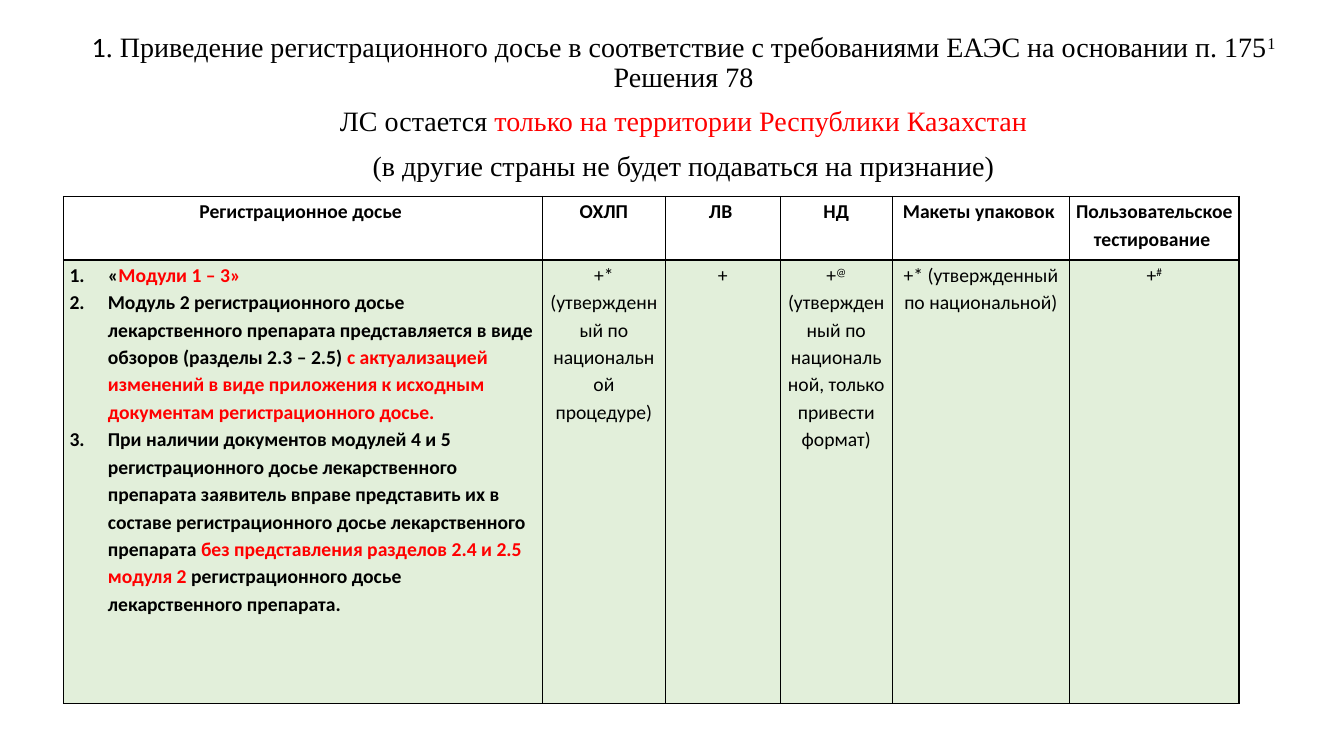
"""Build the slide on bringing a registration dossier into line with EAEU rules."""
import pptx
import pptx.dml.color
import pptx.enum.text
import pptx.oxml
import pptx.oxml.ns
import pptx.util
from pptx.util import Inches

COLORS = {"black": "000000", "red": "FF0000", "green": "E2EFDA"}
CENTER = pptx.enum.text.PP_ALIGN.CENTER


def write(para, pieces, size, face, bold=False):
    """Add runs, each piece being a text and its style: plain, red or super."""
    for text, style in pieces:
        span = para.add_run()
        span.text = text
        span.font.size = pptx.util.Pt(size)
        span.font.name = face
        span.font.bold = bold
        color = COLORS["red" if style == "red" else "black"]
        span.font.color.rgb = pptx.dml.color.RGBColor.from_string(color)
        if style == "super":
            span.font._element.set("baseline", "30000")


def set_bullet(para, indent, bullet):
    """Set a hanging indent in inches and a bullet element."""
    properties = para._p.get_or_add_pPr()
    properties.set("marL", str(Inches(indent)))
    properties.set("indent", str(-Inches(indent)))
    namespace = pptx.oxml.ns.nsdecls("a")
    properties.append(pptx.oxml.parse_xml(f"<a:{bullet} {namespace}/>"))


deck = pptx.Presentation()
deck.slide_width = Inches(13.33)
deck.slide_height = Inches(7.5)
page = deck.slides.add_slide(deck.slide_layouts[1])
title = page.shapes.title
title._element.getparent().remove(title._element)

heading = [
    [
        ("1", "plain"),
        (". Приведение регистрационного досье в соответствие с требованиями ЕАЭС на основании п. 175", "plain"),
        ("1", "super"),
        (" Решения 78", "plain"),
    ],
    [(" ЛС остается ", "plain"), ("только на территории Республики Казахстан ", "red")],
    [("(в другие страны не будет подаваться на признание)", "plain")],
]
body = page.placeholders[1]
body.left, body.top, body.width, body.height = map(Inches, (0.63, 0.28, 12.3, 6.48))
frame = body.text_frame
frame.auto_size = pptx.enum.text.MSO_AUTO_SIZE.NONE
frame.vertical_anchor = pptx.enum.text.MSO_ANCHOR.TOP
for number, pieces in enumerate(heading):
    para = frame.add_paragraph() if number else frame.paragraphs[0]
    para.alignment = CENTER
    para.line_spacing = 0.9
    para.space_before = pptx.util.Pt(10)
    set_bullet(para, 0, "buNone")
    write(para, pieces, 20, "Times New Roman")
frame.paragraphs[0].runs[0].font.name = "Calibri"

headers = [
    ["Регистрационное досье "],
    ["ОХЛП"],
    ["ЛВ "],
    ["НД"],
    ["Макеты упаковок "],
    ["Пользовательское ", "тестирование "],
]
dossier = [
    [("«", "plain"), ("Модули 1 – 3»", "red")],
    [
        ("Модуль 2 регистрационного досье лекарственного препарата представляется в виде обзоров (разделы 2.3 – 2.5) ", "plain"),
        ("с актуализацией изменений в виде приложения к исходным документам регистрационного досье.", "red"),
    ],
    [
        ("При наличии документов модулей 4 и 5 регистрационного досье лекарственного препарата заявитель вправе представить их в составе регистрационного досье лекарственного препарата ", "plain"),
        ("без представления разделов 2.4 и 2.5 модуля 2 ", "red"),
        ("регистрационного досье лекарственного препарата.", "plain"),
    ],
]
requirements = [
    dossier,
    [[("+* (утвержденный по национальной процедуре)", "plain")]],
    [[("+", "plain")]],
    [[("+", "plain"), ("@ ", "super"), ("(утвержденный по национальной, только привести формат)", "plain")]],
    [[("+* (утвержденный по национальной)", "plain")]],
    [[("+", "plain"), ("#", "super")]],
]
header_row = [[[(line, "plain")] for line in lines] for lines in headers]
rows = [header_row, requirements]
widths = [4.75, 1.22, 1.14, 1.11, 1.76, 1.68]
heights = [0.63, 4.4]

table = page.shapes.add_table(
    len(rows), len(widths), Inches(0.63), Inches(1.95), Inches(sum(widths)), Inches(sum(heights))
).table
table.first_row = False
table.horz_banding = False
for column, width in zip(table.columns, widths):
    column.width = Inches(width)
for row, height in zip(table.rows, heights):
    row.height = Inches(height)

for row_number, row in enumerate(rows):
    for column_number, lines in enumerate(row):
        cell = table.cell(row_number, column_number)
        cell.margin_left = cell.margin_right = Inches(0.06)
        cell.margin_top = cell.margin_bottom = 0
        for side in ("lnL", "lnR", "lnT", "lnB"):
            border = (
                f'<a:{side} {pptx.oxml.ns.nsdecls("a")} w="12700"><a:solidFill>'
                f'<a:srgbClr val="{COLORS["black"]}"/></a:solidFill></a:{side}>'
            )
            cell._tc.get_or_add_tcPr().append(pptx.oxml.parse_xml(border))
        if row_number:
            cell.fill.solid()
            cell.fill.fore_color.rgb = pptx.dml.color.RGBColor.from_string(COLORS["green"])
        else:
            cell.fill.background()
        for number, pieces in enumerate(lines):
            para = cell.text_frame.add_paragraph() if number else cell.text_frame.paragraphs[0]
            para.line_spacing = 1.15
            if lines is dossier:
                set_bullet(para, 0.38, 'buAutoNum type="arabicPeriod"'.replace("buAutoNum", "buAutoNum"))
            else:
                para.alignment = CENTER
            write(para, pieces, 14, "Calibri", bold=row_number == 0 or lines is dossier)

deck.save("out.pptx")
